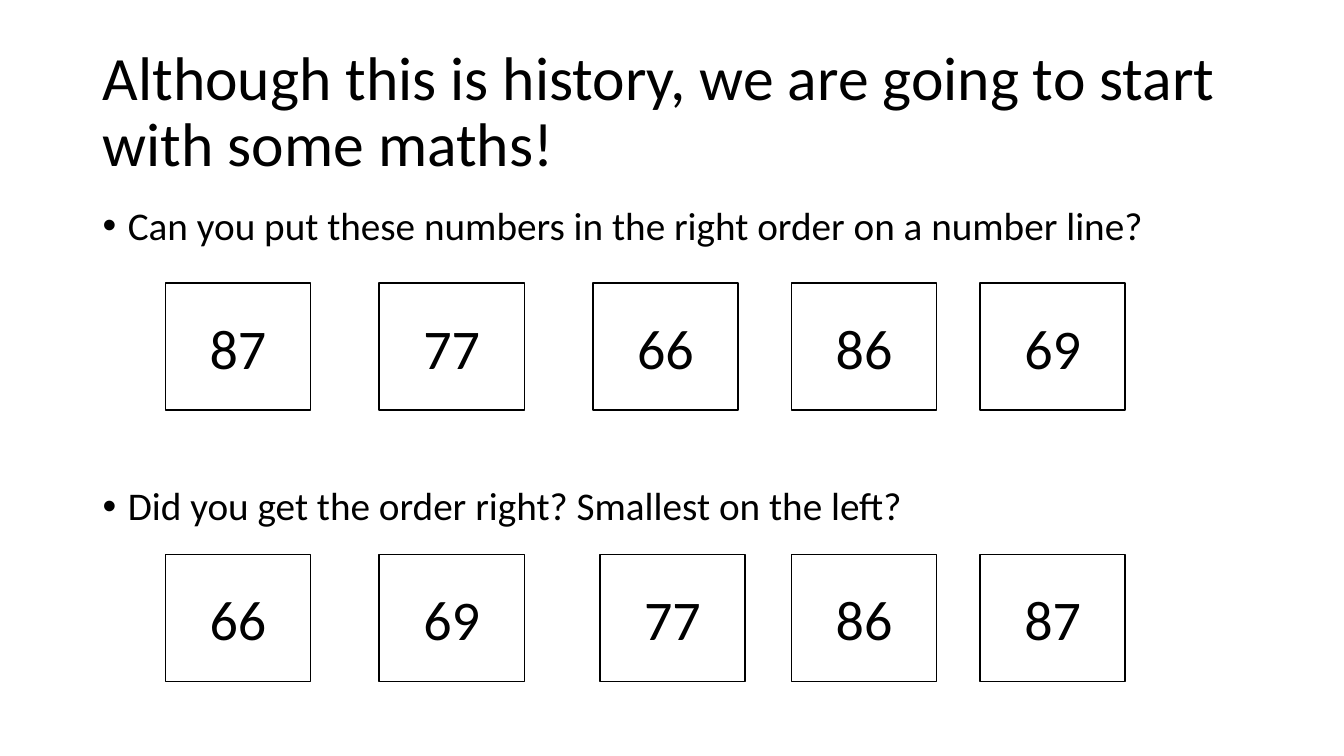
from dataclasses import dataclass

import pptx
import pptx.dml.color
import pptx.enum.shapes
import pptx.enum.text
import pptx.oxml
import pptx.oxml.ns
import pptx.util
from pptx.util import Inches


@dataclass(frozen=True)
class Theme:
    font: str = "Calibri"
    ink: str = "000000"
    paper: str = "FFFFFF"
    title_size: int = 44
    prompt_size: int = 28
    number_size: int = 40
    outline: float = 1
    line_spacing: float = 0.9
    prompt_gap: int = 170


THEME = Theme()
TITLE = "Although this is history, we are going to start with some maths!"
PROMPTS = [
    "Can you put these numbers in the right order on a number line?",
    "Did you get the order right? Smallest on the left?",
]
CARD_WIDTH, CARD_HEIGHT = 1.44, 1.26
CARD_ROWS = [
    (2.81, [(1.64, 87), (3.76, 77), (5.88, 66), (7.85, 86), (9.72, 69)]),
    (5.5, [(1.64, 66), (3.76, 69), (5.95, 77), (7.85, 86), (9.72, 87)]),
]


def color(value):
    return pptx.dml.color.RGBColor.from_string(value)


def format_runs(para, size):
    for span in para.runs:
        span.font.name = THEME.font
        span.font.size = pptx.util.Pt(size)
        span.font.color.rgb = color(THEME.ink)


def add_bullet(para):
    properties = para._p.get_or_add_pPr()
    properties.set("marL", str(Inches(0.25)))
    properties.set("indent", str(Inches(-0.25)))
    namespace = pptx.oxml.ns.nsdecls("a")
    for markup in (
        f'<a:buFont {namespace} typeface="Arial"/>',
        f'<a:buChar {namespace} char="•"/>',
    ):
        properties.append(pptx.oxml.parse_xml(markup))


def set_title(page):
    title = page.shapes.title
    title.left, title.top = Inches(0.92), Inches(0.4)
    title.width, title.height = Inches(11.5), Inches(1.45)
    frame = title.text_frame
    frame.text = TITLE
    frame.auto_size = pptx.enum.text.MSO_AUTO_SIZE.NONE
    frame.vertical_anchor = pptx.enum.text.MSO_ANCHOR.MIDDLE
    para = frame.paragraphs[0]
    para.alignment = pptx.enum.text.PP_ALIGN.LEFT
    para.line_spacing = THEME.line_spacing
    format_runs(para, THEME.title_size)


def add_prompts(page):
    box = page.shapes.add_textbox(Inches(0.92), Inches(2), Inches(11.5), Inches(4.76))
    frame = box.text_frame
    frame.word_wrap = True
    frame.text = "\n".join(PROMPTS)
    for index, para in enumerate(frame.paragraphs):
        add_bullet(para)
        para.line_spacing = THEME.line_spacing
        para.space_before = pptx.util.Pt(THEME.prompt_gap if index else 0)
        format_runs(para, THEME.prompt_size)


def add_card(page, left, top, number):
    card = page.shapes.add_shape(
        pptx.enum.shapes.MSO_SHAPE.RECTANGLE,
        Inches(left), Inches(top), Inches(CARD_WIDTH), Inches(CARD_HEIGHT),
    )
    card.shadow.inherit = False
    card.fill.solid()
    card.fill.fore_color.rgb = color(THEME.paper)
    card.line.color.rgb = color(THEME.ink)
    card.line.width = pptx.util.Pt(THEME.outline)
    frame = card.text_frame
    frame.text = str(number)
    frame.vertical_anchor = pptx.enum.text.MSO_ANCHOR.MIDDLE
    para = frame.paragraphs[0]
    para.alignment = pptx.enum.text.PP_ALIGN.CENTER
    format_runs(para, THEME.number_size)


def main():
    deck = pptx.Presentation()
    deck.slide_width, deck.slide_height = Inches(13.33), Inches(7.5)
    page = deck.slides.add_slide(deck.slide_layouts.get_by_name("Title Only"))
    set_title(page)
    add_prompts(page)
    for top, cards in CARD_ROWS:
        for left, number in cards:
            add_card(page, left, top, number)
    deck.save("out.pptx")


if __name__ == "__main__":
    main()
